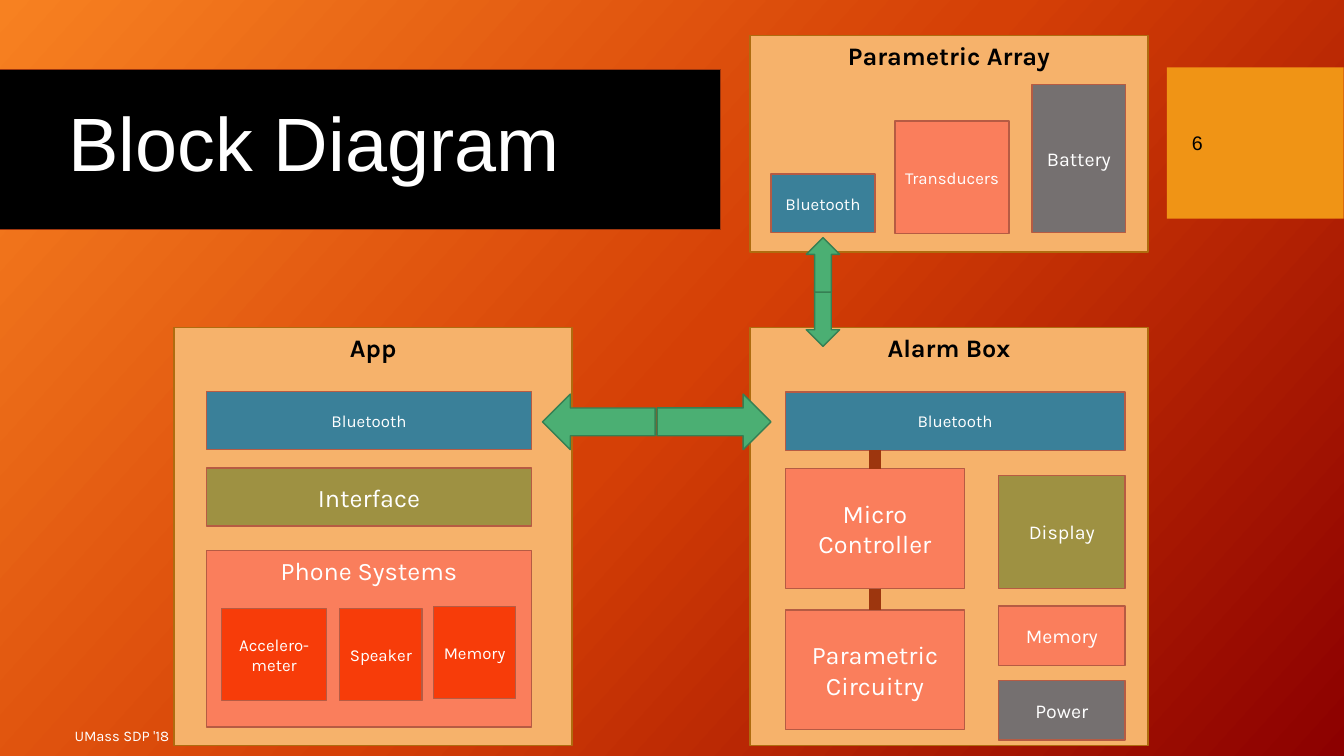
"""Build the block diagram slide of the alarm system."""
from copy import deepcopy

from lxml import etree
from pptx import Presentation
from pptx.dml.color import RGBColor
from pptx.enum.shapes import MSO_CONNECTOR, MSO_SHAPE
from pptx.enum.text import MSO_ANCHOR, PP_ALIGN
from pptx.oxml.ns import qn
from pptx.util import Cm, Pt

RECTANGLE = MSO_SHAPE.RECTANGLE
RIGHT_ARROW, DOWN_ARROW = MSO_SHAPE.RIGHT_ARROW, MSO_SHAPE.DOWN_ARROW
STRAIGHT = MSO_CONNECTOR.STRAIGHT
TOP, MIDDLE = MSO_ANCHOR.TOP, MSO_ANCHOR.MIDDLE
LEFT, CENTER = PP_ALIGN.LEFT, PP_ALIGN.CENTER
SIDE_TOP, SIDE_BOTTOM = 0, 2

COLORS = {
    "black": "000000", "white": "FFFFFF", "badge": "F09415",
    "panel": "F6B26B", "panel_line": "AF6C0F", "block_line": "B65B43",
    "radio": "3A8099", "screen": "9E9142", "logic": "FA7E5C",
    "power": "757070", "sensor": "F73C09",
    "arrow": "4BAF73", "arrow_line": "367F53", "link": "9D360E",
}
BACKGROUND = [(0, "F78121"), (0.5, "D54006"), (1, "8C0000")]

PANELS = [
    ("Alarm Box", 18.9, 8.26, 10.52),
    ("Parametric Array", 18.9, 0.89, 5.46),
    ("App", 4.39, 8.26, 10.52),
]
BLOCKS = [
    ("Bluetooth", "radio", 12, (19.79, 9.88, 8.56, 1.47)),
    ("Display", "screen", 14, (25.17, 11.99, 3.18, 2.84)),
    ("Memory", "logic", 14, (25.17, 15.27, 3.18, 1.5)),
    ("Power", "power", 14, (25.17, 17.15, 3.18, 1.5)),
    ("Bluetooth", "radio", 12, (19.43, 4.39, 2.62, 1.47)),
    ("Transducers", "logic", 12, (22.56, 3.05, 2.87, 2.84)),
    ("Battery", "power", 14, (26.01, 2.13, 2.36, 3.73)),
    ("Bluetooth", "radio", 12, (5.21, 9.86, 8.18, 1.47)),
    ("Interface", "screen", 18, (5.21, 11.79, 8.18, 1.47)),
]
PHONE_PARTS = [
    ("Accelero- meter", "sensor", 12, (5.59, 15.34, 2.64, 2.31)),
    ("Speaker", "sensor", 12, (8.56, 15.34, 2.08, 2.31)),
    ("Memory", "sensor", 12, (10.92, 15.29, 2.08, 2.31)),
]
ARROWS = [
    (RIGHT_ARROW, 0, (16.56, 9.93, 2.87, 1.4)),
    (RIGHT_ARROW, 180, (13.67, 9.93, 2.84, 1.4)),
    (DOWN_ARROW, 0, (20.32, 7.26, 0.84, 1.47)),
    (DOWN_ARROW, 180, (20.32, 5.99, 0.84, 1.37)),
]


def rgb(name):
    """Return the named colour."""
    return RGBColor.from_string(COLORS[name])


def set_attributes(target, values):
    """Set every attribute of a dict of format values."""
    for name, value in values.items():
        setattr(target, name, value)


def write_text(shape, text, size, color="white", font="Karla", bold=False,
               align=CENTER, anchor=MIDDLE):
    """Write one formatted paragraph into a shape."""
    frame = shape.text_frame
    set_attributes(frame, {"word_wrap": True, "vertical_anchor": anchor})
    paragraph = frame.paragraphs[0]
    set_attributes(paragraph, {"text": text, "alignment": align})
    set_attributes(paragraph.font, {"name": font, "size": Pt(size), "bold": bold})
    paragraph.font.color.rgb = rgb(color)


def add_filled(slide, kind, box, fill, line=None, width=1):
    """Add a flat preset shape with an optional outline."""
    shape = slide.shapes.add_shape(kind, *map(Cm, box))
    shape.shadow.inherit = False
    shape.fill.solid()
    shape.fill.fore_color.rgb = rgb(fill)
    if line:
        shape.line.color.rgb = rgb(line)
        shape.line.width = Pt(width)
    else:
        shape.line.fill.background()
    return shape


def add_panel(slide, title, left, top, height):
    """Add a titled panel that holds the blocks of one device."""
    panel = add_filled(slide, RECTANGLE, (left, top, 10.03, height), "panel", "panel_line")
    write_text(panel, title, 18, "black", bold=True, anchor=TOP)


def add_block(slide, label, fill, size, box, anchor=MIDDLE):
    """Add a labelled block."""
    block = add_filled(slide, RECTANGLE, box, fill, "block_line")
    write_text(block, label, size, anchor=anchor)
    return block


def add_label(slide, text, size, box, **style):
    """Add a left-aligned text box."""
    label = slide.shapes.add_textbox(*map(Cm, box))
    write_text(label, text, size, align=LEFT, **style)
    return label


def add_link(slide, top, lower, upper=None):
    """Add a thick vertical link that ends on top of the lower block."""
    middle = lower.left + lower.width // 2
    link = slide.shapes.add_connector(STRAIGHT, middle, Cm(top), middle, lower.top)
    if upper:
        link.begin_connect(upper, SIDE_BOTTOM)
    link.end_connect(lower, SIDE_TOP)
    link.line.color.rgb = rgb("link")
    link.line.width = Pt(9)
    etree.SubElement(link.element.spPr, qn("a:effectLst"))


def paint_background(slide):
    """Fill the background with a diagonal three-colour gradient."""
    fill = slide.background.fill
    fill.gradient()
    fill.gradient_angle = 318
    stops = slide.element.find(".//" + qn("a:gsLst"))
    stops.insert(1, deepcopy(stops[0]))
    for stop, (position, color) in zip(fill.gradient_stops, BACKGROUND):
        stop.position = position
        stop.color.rgb = RGBColor.from_string(color)


def add_heading(slide):
    """Add the title bar, the page badge and the footer."""
    add_filled(slide, RECTANGLE, (29.41, 1.7, 4.45, 3.81), "badge")
    add_label(slide, "6", 14, (29.79, 2.08, 3.2, 3.02), color="black", font="Arial")
    add_label(slide, "UMass SDP '18", 10.5, (1.63, 18.03, 19.08, 1.02))
    add_filled(slide, RECTANGLE, (0, 1.75, 18.16, 4.04), "black", "link", 0.75)
    title = add_label(slide, "Block Diagram", 54, (1.47, 2.18, 16.3, 3.23),
                      font="Arial", anchor=TOP)
    set_attributes(title.text_frame, {"margin_top": Cm(0.25), "margin_bottom": Cm(0.25)})


def main():
    """Build and save the slide."""
    presentation = Presentation()
    set_attributes(presentation, {"slide_width": Cm(33.87), "slide_height": Cm(19.05)})
    slide = presentation.slides.add_slide(presentation.slide_layouts[6])
    paint_background(slide)
    add_heading(slide)
    for panel in PANELS:
        add_panel(slide, *panel)
    for block in BLOCKS:
        add_block(slide, *block)
    add_block(slide, "Phone Systems", "logic", 18, (5.21, 13.87, 8.18, 4.45), TOP)
    for part in PHONE_PARTS:
        add_block(slide, *part)
    controller = add_block(slide, "Micro Controller", "logic", 18, (19.79, 11.81, 4.52, 3.02))
    circuitry = add_block(slide, "Parametric Circuitry", "logic", 18, (19.79, 15.37, 4.52, 3.02))
    add_link(slide, 11.35, controller)
    add_link(slide, 14.83, circuitry, controller)
    for kind, rotation, box in ARROWS:
        add_filled(slide, kind, box, "arrow", "arrow_line").rotation = rotation
    presentation.save("out.pptx")


if __name__ == "__main__":
    main()
